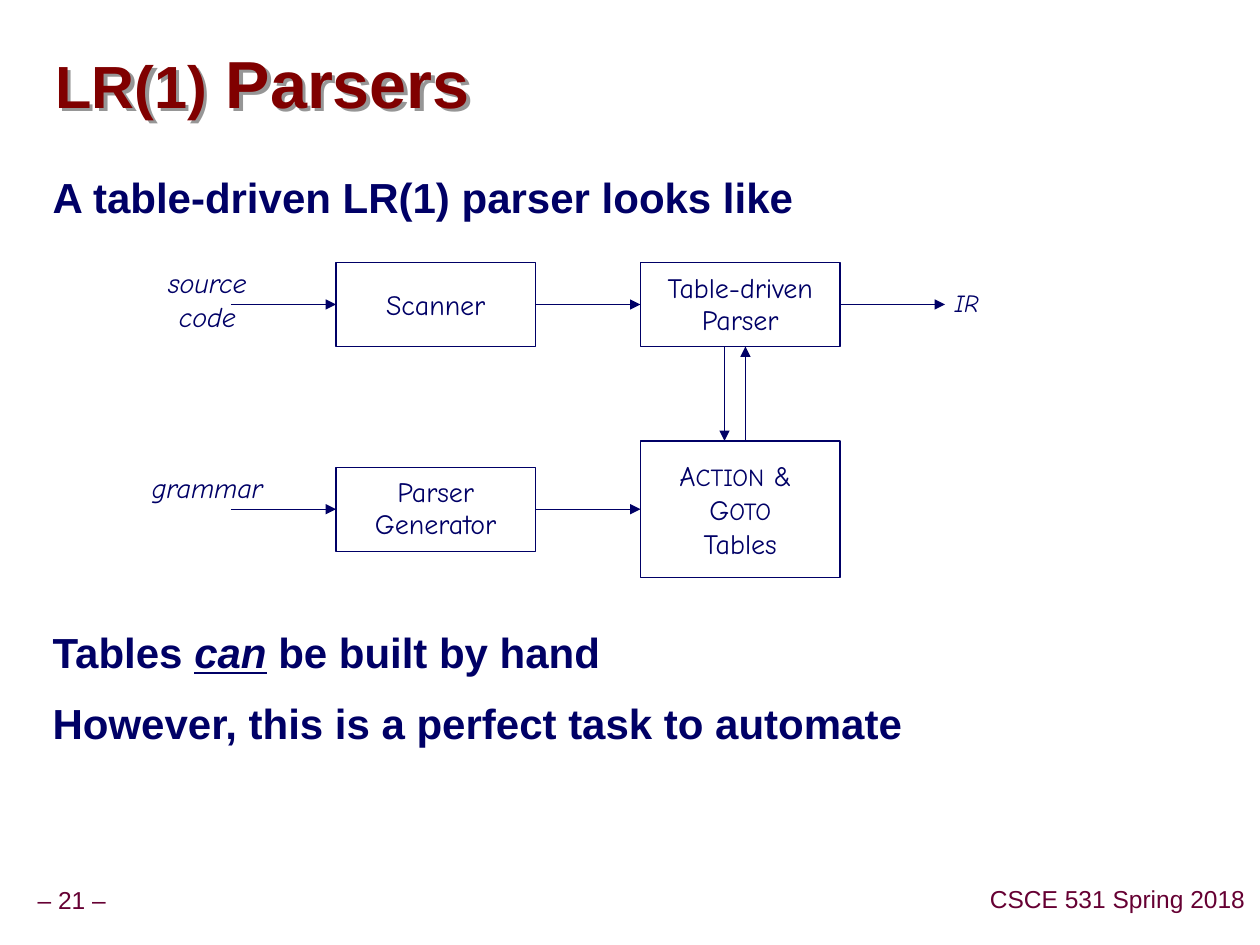
from dataclasses import dataclass

from lxml.etree import SubElement
from pptx import Presentation
from pptx.dml.color import RGBColor
from pptx.enum.shapes import MSO_CONNECTOR, MSO_SHAPE
from pptx.enum.text import MSO_ANCHOR, PP_ALIGN
from pptx.oxml.ns import qn
from pptx.util import Pt


@dataclass(frozen=True)
class Theme:
    """Colours, fonts and type sizes of the deck."""
    ink: RGBColor = RGBColor(0x00, 0x00, 0x66)
    title: RGBColor = RGBColor(0x80, 0x00, 0x00)
    footer: RGBColor = RGBColor(0x66, 0x00, 0x33)
    shadow: str = "969696"
    text_font: str = "Arial"
    diagram_font: str = "Comic Neue"
    title_size: float = 38
    title_small_size: float = 34
    body_size: float = 24
    diagram_size: float = 16
    small_size: float = 14
    line_width: float = 0.75


@dataclass(frozen=True)
class Box:
    """A rectangle in points."""
    left: float
    top: float
    width: float
    height: float

    def inner(self, left, top, width, height):
        """Return a box placed relative to this one."""
        return Box(self.left + left, self.top + top, width, height)

    def lengths(self):
        """Return the four lengths for a python-pptx call."""
        return Pt(self.left), Pt(self.top), Pt(self.width), Pt(self.height)


THEME = Theme()
LEFT, BOTTOM, RIGHT = 1, 2, 3


def style_font(font, name, size, color, bold=False, italic=False):
    """Set the look of a font."""
    font.name, font.size, font.color.rgb = name, Pt(size), color
    font.bold, font.italic = bold, italic


def style_frame(frame, anchor, wrap, inset=None):
    """Set anchor, wrapping and optional equal insets of a text frame."""
    frame.vertical_anchor, frame.word_wrap = anchor, wrap
    if inset is not None:
        frame.margin_left = frame.margin_right = Pt(inset)
        frame.margin_top = frame.margin_bottom = Pt(inset)


def add_spans(para, spans, name, color, bold=False, italic=False):
    """Add (text, size) spans to a paragraph."""
    for text, size in spans:
        span = para.add_run()
        span.text = text
        style_font(span.font, name, size, color, bold, italic)


def fill_lines(frame, lines, spacing=1.0, italic=False):
    """Write centred diagram lines, each a list of spans."""
    for index, spans in enumerate(lines):
        para = frame.add_paragraph() if index else frame.paragraphs[0]
        para.alignment, para.line_spacing = PP_ALIGN.CENTER, spacing
        add_spans(para, spans, THEME.diagram_font, THEME.ink, italic=italic)


def add_title(page, box):
    """Place the shadowed slide title."""
    title = page.shapes.title
    title.left, title.top, title.width, title.height = box.lengths()
    style_frame(title.text_frame, MSO_ANCHOR.MIDDLE, True, 0)
    para = title.text_frame.paragraphs[0]
    para.alignment, para.line_spacing = PP_ALIGN.LEFT, 0.87
    spans = [("LR(1)", THEME.title_small_size), (" Parsers", THEME.title_size)]
    add_spans(para, spans, THEME.text_font, THEME.title, bold=True)
    title.fill.background()
    effects = SubElement(title._element.spPr, qn("a:effectLst"))
    shadow = SubElement(effects, qn("a:outerShdw"), dist=str(Pt(2.83)),
                        dir="2700000", algn="ctr", rotWithShape="0")
    SubElement(shadow, qn("a:srgbClr"), val=THEME.shadow)


def add_body(page, box):
    """Place the statements above and below the diagram."""
    frame = page.shapes.add_textbox(*box.lengths()).text_frame
    style_frame(frame, MSO_ANCHOR.TOP, True)
    statements = [
        (0, ["A table-driven LR(1) parser looks like"]),
        (232.7, ["Tables ", "can", " be built by hand"]),
        (13.2, ["However, this is a perfect task to automate"]),
    ]
    for index, (gap, texts) in enumerate(statements):
        para = frame.add_paragraph() if index else frame.paragraphs[0]
        para.line_spacing, para.space_before = 0.95, Pt(gap)
        spans = [(text, THEME.body_size) for text in texts]
        add_spans(para, spans, THEME.text_font, THEME.ink, bold=True)
    emphasis = frame.paragraphs[1].runs[1].font
    emphasis.italic = emphasis.underline = True


def add_stage(page, box, lines, spacing=0.95):
    """Draw one outlined stage of the diagram."""
    stage = page.shapes.add_shape(MSO_SHAPE.RECTANGLE, *box.lengths())
    stage.shadow.inherit = False
    stage.fill.background()
    stage.line.color.rgb, stage.line.width = THEME.ink, Pt(THEME.line_width)
    style_frame(stage.text_frame, MSO_ANCHOR.MIDDLE, False)
    fill_lines(stage.text_frame, lines, spacing)
    return stage


def add_label(page, box, texts, size):
    """Place an italic input or output label."""
    frame = page.shapes.add_textbox(*box.lengths()).text_frame
    style_frame(frame, MSO_ANCHOR.TOP, True)
    fill_lines(frame, [[(text, size)] for text in texts], italic=True)


def add_arrow(page, start, end, source=None, target=None):
    """Draw an arrow between points, joined to any given stages' sides."""
    arrow = page.shapes.add_connector(
        MSO_CONNECTOR.STRAIGHT, *(Pt(value) for value in (*start, *end)))
    arrow.line.color.rgb, arrow.line.width = THEME.ink, Pt(THEME.line_width)
    properties = arrow._element.spPr
    SubElement(properties.find(qn("a:ln")), qn("a:tailEnd"), type="triangle")
    SubElement(properties, qn("a:effectLst"))
    if source is not None:
        arrow.begin_connect(source, RIGHT)
    if target is not None:
        arrow.end_connect(target, LEFT)


def add_diagram(page, box):
    """Draw the table-driven parser and its generator."""
    size, small = THEME.diagram_size, THEME.small_size
    width, height, gap = 114, 48, 60
    first, second = 122, 122 + width + gap
    upper, lower, tables_top, tables_height = 2, 119, 104, 78
    scanner = add_stage(page, box.inner(first, upper, width, height),
                        [[("Scanner", size)]], 1.0)
    parser = add_stage(page, box.inner(second, upper, width, height),
                       [[("Table-driven", size)], [("Parser", size)]])
    tables = add_stage(
        page, box.inner(second, tables_top, width, tables_height),
        [[("A", size), ("CTION", small), (" & ", size)],
         [("G", size), ("OTO", small)], [("Tables", size)]], 1.0)
    generator = add_stage(page, box.inner(first, lower, width, height),
                          [[("Parser", size)], [("Generator", size)]])

    for top, left_stage, right_stage in ((upper, scanner, parser),
                                         (lower, generator, tables)):
        middle = box.top + top + height / 2
        entry, exit_ = box.left + first, box.left + first + width
        add_arrow(page, (entry - gap, middle), (entry, middle),
                  target=left_stage)
        add_arrow(page, (exit_, middle), (exit_ + gap, middle),
                  left_stage, right_stage)
    output, middle = box.left + second + width, box.top + upper + height / 2
    add_arrow(page, (output, middle), (output + gap, middle), parser)
    parser_bottom = box.top + upper + height
    request, reply = box.left + second + 48, box.left + second + 60
    add_arrow(page, (request, parser_bottom), (request, box.top + tables_top))
    add_arrow(page, (reply, box.top + tables_top), (reply, parser_bottom))

    add_label(page, box.inner(0.5, 0.3, 96, 52), ["source", "code"], size)
    add_label(page, box.inner(0.5, 117.6, 96, 29.5), ["grammar"], size)
    add_label(page, box.inner(461.4, 13.3, 42, 26.6), ["IR"], small)


def add_footer(page, box, text):
    """Place one footer text."""
    frame = page.shapes.add_textbox(*box.lengths()).text_frame
    style_frame(frame, MSO_ANCHOR.MIDDLE, False, 3.6)
    para = frame.paragraphs[0]
    para.alignment, para.line_spacing = PP_ALIGN.CENTER, 0.9
    add_spans(para, [(text, THEME.small_size)], THEME.text_font, THEME.footer)


def main():
    """Build and save the deck."""
    deck = Presentation()
    deck.slide_width, deck.slide_height = Pt(720), Pt(540)
    page = deck.slides.add_slide(deck.slide_layouts[5])
    add_title(page, Box(31.7, 19.4, 686, 61.2))
    add_body(page, Box(23, 96.5, 654.5, 411))
    add_diagram(page, Box(70, 148, 504, 182))
    add_footer(page, Box(17.3, 504, 47.5, 22.3), "– 21 –")
    add_footer(page, Box(561.6, 503.3, 154, 22.3), "CSCE 531 Spring 2018")
    deck.save("out.pptx")


if __name__ == "__main__":
    main()
